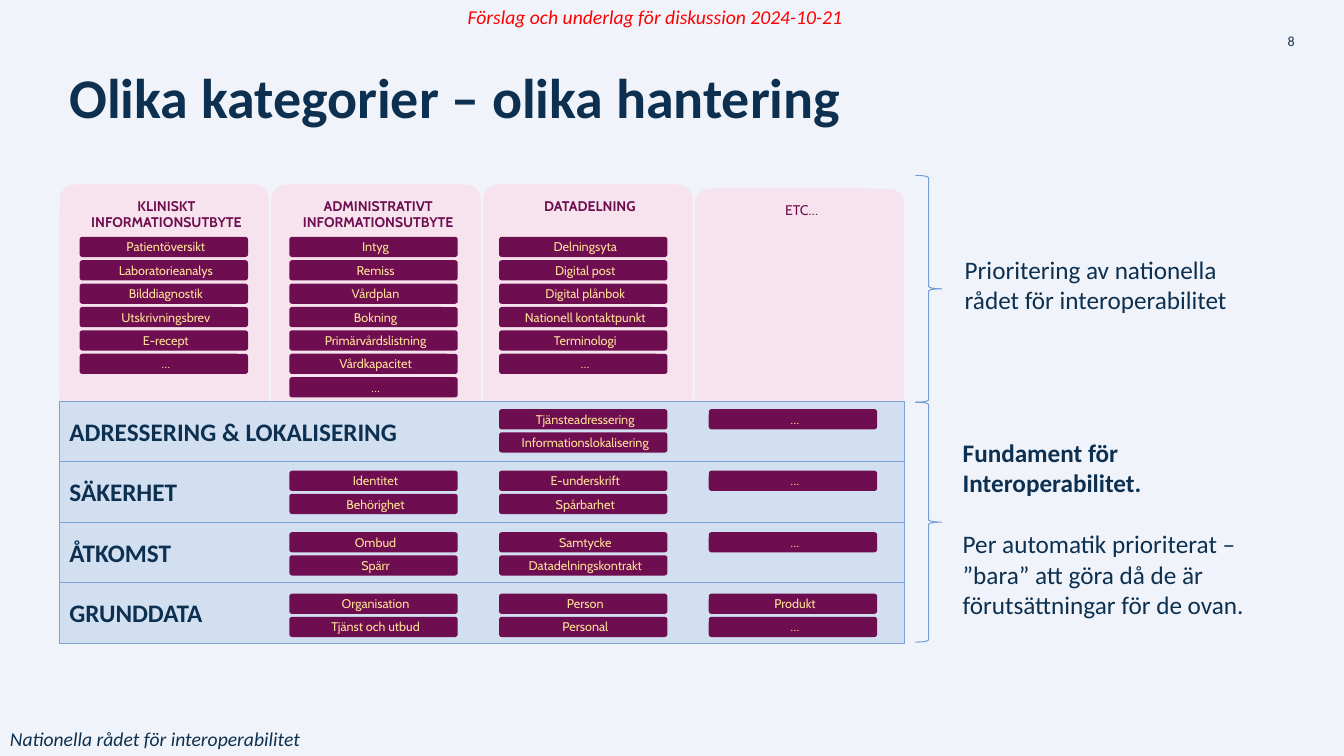
from pptx import Presentation
from pptx.dml.color import RGBColor
from pptx.enum.shapes import MSO_SHAPE as SHAPE
from pptx.enum.text import MSO_ANCHOR as ANCHOR, PP_ALIGN as ALIGN
from pptx.util import Inches, Pt

NAVY, PLUM, PINK, YELLOW = "0D3050", "6E0E50", "F7E3ED", "FFE098"
PALE_BLUE, EDGE_BLUE, BRACE_BLUE = "D1DFF1", "7BA3D7", "729FD4"

CARD_PITCH, CARD_W = 2.1, 2.08
CHIP_PITCH, CHIP_W, CHIP_H, CHIP_STEP = 2.08, 1.67, 0.2, 0.23
CHIP_INDENT = 0.2
LAYER_STEP = 0.61

CARDS = [
    ("KLINISKT INFORMATIONSUTBYTE", True, 0,
     ["Patientöversikt", "Laboratorieanalys", "Bilddiagnostik",
      "Utskrivningsbrev", "E-recept", "…"]),
    ("ADMINISTRATIVT INFORMATIONSUTBYTE", True, 0,
     ["Intyg", "Remiss", "Vårdplan", "Bokning", "Primärvårdslistning",
      "Vårdkapacitet", "…"]),
    ("DATADELNING", True, 0,
     ["Delningsyta", "Digital post", "Digital plånbok",
      "Nationell kontaktpunkt", "Terminologi", "…"]),
    ("ETC…", False, 0.04, []),
]
LAYERS = [
    ("ADRESSERING & LOKALISERING",
     {2: ["Tjänsteadressering", "Informationslokalisering"], 3: ["…"]}),
    ("SÄKERHET",
     {1: ["Identitet", "Behörighet"], 2: ["E-underskrift", "Spårbarhet"], 3: ["…"]}),
    ("ÅTKOMST",
     {1: ["Ombud", "Spärr"], 2: ["Samtycke", "Datadelningskontrakt"], 3: ["…"]}),
    ("GRUNDDATA",
     {1: ["Organisation", "Tjänst och utbud"], 2: ["Person", "Personal"],
      3: ["Produkt", "…"]}),
]


def rgb(value):
    return RGBColor.from_string(value)


def add_run(p, text, size, color, font="Calibri", bold=False, italic=False):
    r = p.add_run()
    r.text = text
    r.font.size = Pt(size)
    r.font.name = font
    r.font.bold = bold
    r.font.italic = italic
    r.font.color.rgb = rgb(color)


def set_insets(tf, left, top, right, bottom):
    tf.margin_left, tf.margin_top = Inches(left), Inches(top)
    tf.margin_right, tf.margin_bottom = Inches(right), Inches(bottom)


def add_block(slide, kind, box, fill=None, line=None, adj=None):
    sp = slide.shapes.add_shape(kind, *map(Inches, box))
    sp.shadow.inherit = False
    if fill:
        sp.fill.solid()
        sp.fill.fore_color.rgb = rgb(fill)
    else:
        sp.fill.background()
    if line:
        sp.line.color.rgb = rgb(line)
        sp.line.width = Pt(0.75)
    else:
        sp.line.fill.background()
    if adj:
        sp.adjustments[0] = adj
    sp.text_frame.word_wrap = True
    return sp


def add_text(slide, box, text, size, color=NAVY, wrap=True, **style):
    tf = slide.shapes.add_textbox(*map(Inches, box)).text_frame
    tf.word_wrap = wrap
    add_run(tf.paragraphs[0], text, size, color, **style)
    return tf


def centre_label(sp, text, size, color, bold, anchor, top):
    tf = sp.text_frame
    tf.vertical_anchor = anchor
    set_insets(tf, 0.08, top, 0.04, 0.04)
    p = tf.paragraphs[0]
    p.alignment = ALIGN.CENTER
    p.space_after = Pt(6)
    add_run(p, text, size, color, "Cabin", bold)


def add_chips(slide, left, top, labels, step=CHIP_STEP):
    for i, label in enumerate(labels):
        sp = add_block(slide, SHAPE.ROUNDED_RECTANGLE,
                       (left, top + i * step, CHIP_W, CHIP_H), PLUM, adj=0.137)
        centre_label(sp, label, 9, YELLOW, False, ANCHOR.MIDDLE, 0.04)


def add_cards(slide, box):
    left, top, _, height = box
    for col, (heading, bold, drop, chips) in enumerate(CARDS):
        sp = add_block(slide, SHAPE.ROUNDED_RECTANGLE,
                       (left + col * CARD_PITCH, top + drop, CARD_W, height),
                       PINK, adj=0.074)
        centre_label(sp, heading, 10, PLUM, bold, ANCHOR.TOP, 0.08)
        add_chips(slide, left + CHIP_INDENT + col * CHIP_PITCH, top + 0.52,
                  chips, 0.232)


def add_layers(slide, box):
    left, top, width, height = box
    row_h = height / len(LAYERS)
    for row, (name, cells) in enumerate(LAYERS):
        sp = add_block(slide, SHAPE.RECTANGLE,
                       (left, top + row * row_h, width, row_h), PALE_BLUE, EDGE_BLUE)
        tf = sp.text_frame
        tf.vertical_anchor = ANCHOR.MIDDLE
        p = tf.paragraphs[0]
        p.alignment = ALIGN.LEFT
        add_run(p, name, 18, NAVY, bold=True)
        for col, chips in cells.items():
            add_chips(slide, left + CHIP_INDENT + col * CHIP_PITCH,
                      top + 0.08 + row * LAYER_STEP, chips)


def add_comments(slide, box):
    left, top, width, height = box
    split = 2.25
    for y, h in ((top, split), (top + split, height - split)):
        add_block(slide, SHAPE.RIGHT_BRACE, (left, y, 0.26, h), line=BRACE_BLUE)
    add_text(slide, (left + 0.39, top + 0.73, width - 0.63, 0.71),
             "Prioritering av nationella rådet för interoperabilitet", 18)
    tf = add_text(slide, (left + 0.37, top + 2.55, width - 0.37, 1.92),
                  "Fundament för Interoperabilitet.", 18, bold=True)
    p = tf.add_paragraph()
    p.space_before = Pt(22)
    add_run(p, "Per automatik prioriterat – ”bara” att göra då de är "
               "förutsättningar för de ovan.", 18, NAVY)


def add_frame(slide):
    tf = add_text(slide, (12.19, 0.27, 0.7, 0.26), "8", 10, "182F4E")
    set_insets(tf, 0.05, 0.05, 0.05, 0.05)
    tf.paragraphs[0].alignment = ALIGN.RIGHT
    tf = add_text(slide, (0.59, 0.64, 12.04, 0.71),
                  "Olika kategorier – olika hantering", 40, bold=True)
    tf.vertical_anchor = ANCHOR.MIDDLE
    tf.paragraphs[0].line_spacing = 0.9
    add_text(slide, (0, 7.16, 3.26, 0.34), "Nationella rådet för interoperabilitet",
             14, wrap=False, italic=True)
    add_text(slide, (4.54, 0, 4.26, 0.34),
             "Förslag och underlag för diskussion 2024-10-21",
             14, "FF0000", wrap=False, italic=True)


def main():
    prs = Presentation()
    prs.slide_width, prs.slide_height = Inches(13.33), Inches(7.5)
    slide = prs.slides.add_slide(prs.slide_layouts[6])
    slide.background.fill.solid()
    slide.background.fill.fore_color.rgb = rgb("F0F4FA")
    add_frame(slide)
    add_cards(slide, (0.59, 1.83, 8.38, 2.25))
    add_layers(slide, (0.59, 3.98, 8.38, 2.4))
    add_comments(slide, (9.08, 1.74, 3.66, 4.63))
    prs.save("out.pptx")


if __name__ == "__main__":
    main()
